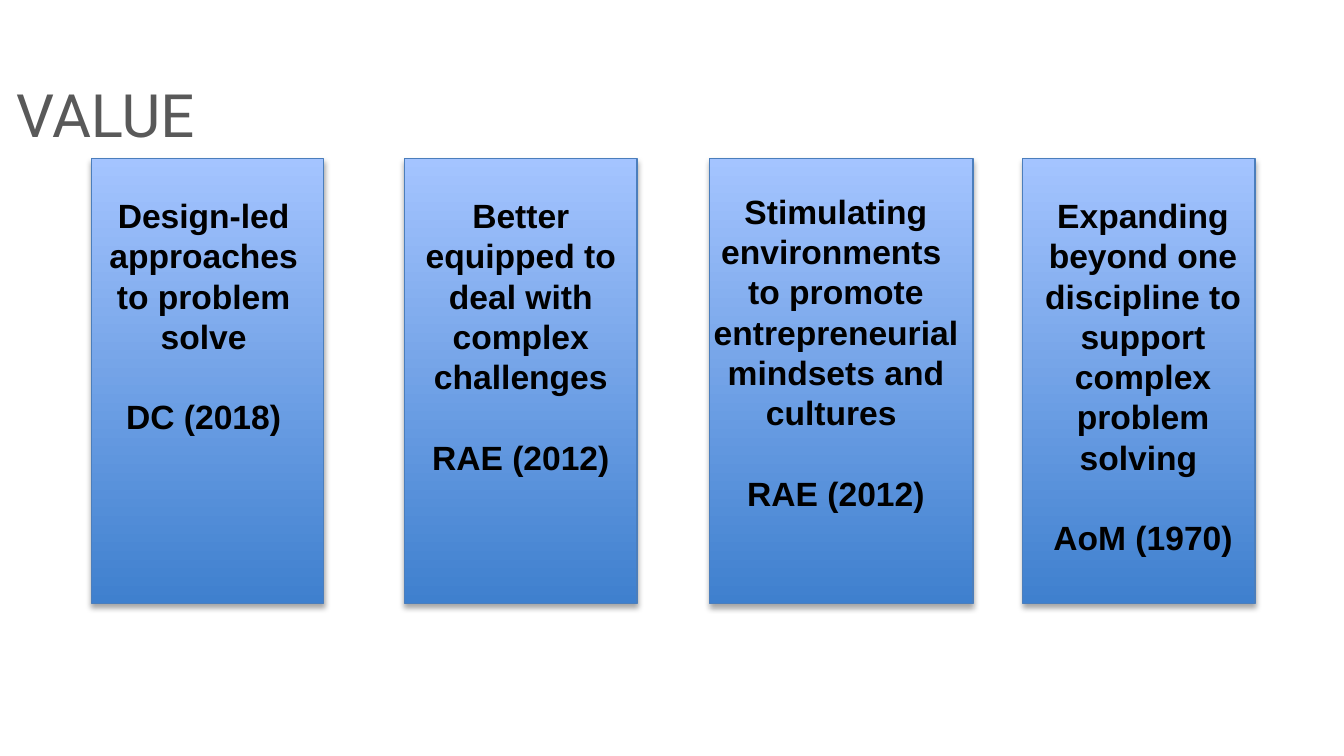
from lxml import etree
from pptx import Presentation
from pptx.dml.color import RGBColor
from pptx.enum.shapes import MSO_SHAPE
from pptx.enum.text import MSO_ANCHOR, MSO_AUTO_SIZE, PP_ALIGN
from pptx.oxml.ns import qn
from pptx.util import Inches, Pt

THEME = {
    "title": RGBColor(0x59, 0x59, 0x59),
    "text": RGBColor(0, 0, 0),
    "card_bottom": RGBColor(0x3F, 0x80, 0xCE),
    "card_top": RGBColor(0xA4, 0xC4, 0xFF),
    "card_line": RGBColor(0x4B, 0x7E, 0xBC),
    "title_size": Pt(32),
    "text_size": Pt(18),
    "line_height": Pt(21.6),
}


def write(p, text, font="Arial", size=THEME["text_size"], color=THEME["text"],
          bold=False, align=PP_ALIGN.CENTER, line=None, before=None):
    p.alignment = align
    p.line_spacing = line
    p.space_before = before
    r = p.add_run()
    r.text = text
    r.font.name, r.font.size, r.font.bold = font, size, bold
    r.font.color.rgb = color


def add_soft_shadow(sp):
    sp.shadow.inherit = False
    effects = sp._element.spPr.find(qn("a:effectLst"))
    shadow = etree.SubElement(effects, qn("a:outerShdw"), blurRad=str(Pt(3.15)),
                              dist=str(Pt(1.81)), dir="5400000", rotWithShape="0")
    color = etree.SubElement(shadow, qn("a:srgbClr"), val="000000")
    etree.SubElement(color, qn("a:alpha"), val="35000")


prs = Presentation()
prs.slide_width = Inches(10)
prs.slide_height = Inches(10 * 9 / 16)
s = prs.slides.add_slide(prs.slide_layouts[5])

title = s.shapes.title
title.left, title.top = Inches(0.02), Inches(0.53)
title.width, title.height = Inches(1.75), Inches(0.63)
tf = title.text_frame
tf.auto_size = MSO_AUTO_SIZE.NONE
tf.vertical_anchor = MSO_ANCHOR.TOP
write(tf.paragraphs[0], "VALUE", font="Roboto", size=THEME["title_size"],
      color=THEME["title"], align=PP_ALIGN.LEFT)

# card left, card width, text left, text top, text width, statement, reference
cards = [
    (0.68, 1.73, 0.62, 1.4, 1.79,
     ["Design-led approaches to problem solve"], "DC (2018)"),
    (3.01, 1.73, 2.98, 1.4, 1.79,
     ["Better equipped to deal with complex challenges"], "RAE (2012)"),
    (5.28, 1.96, 5.18, 1.37, 2.08,
     ["Stimulating environments ",
      "to promote entrepreneurial mindsets and cultures "], "RAE (2012)"),
    (7.61, 1.73, 7.61, 1.4, 1.79,
     ["Expanding beyond one discipline to support complex problem solving "],
     "AoM (1970)"),
]

for left, width, *_ in cards:
    sp = s.shapes.add_shape(MSO_SHAPE.RECTANGLE, Inches(left), Inches(1.18),
                            Inches(width), Inches(3.31))
    sp.fill.gradient()
    sp.fill.gradient_angle = 90
    for stop, position, color in zip(sp.fill.gradient_stops, (0, 1),
                                     ("card_bottom", "card_top")):
        stop.position = position
        stop.color.rgb = THEME[color]
    sp.line.color.rgb = THEME["card_line"]
    sp.line.width = Pt(0.75)
    add_soft_shadow(sp)

for _, _, left, top, width, statement, reference in cards:
    tf = s.shapes.add_textbox(Inches(left), Inches(top),
                              Inches(width), Inches(1.95)).text_frame
    tf.word_wrap = True
    for i, text in enumerate(statement):
        p = tf.add_paragraph() if i else tf.paragraphs[0]
        write(p, text, bold=True, line=THEME["line_height"])
    write(tf.add_paragraph(), reference, bold=True,
          line=THEME["line_height"], before=THEME["line_height"])

prs.save("out.pptx")
